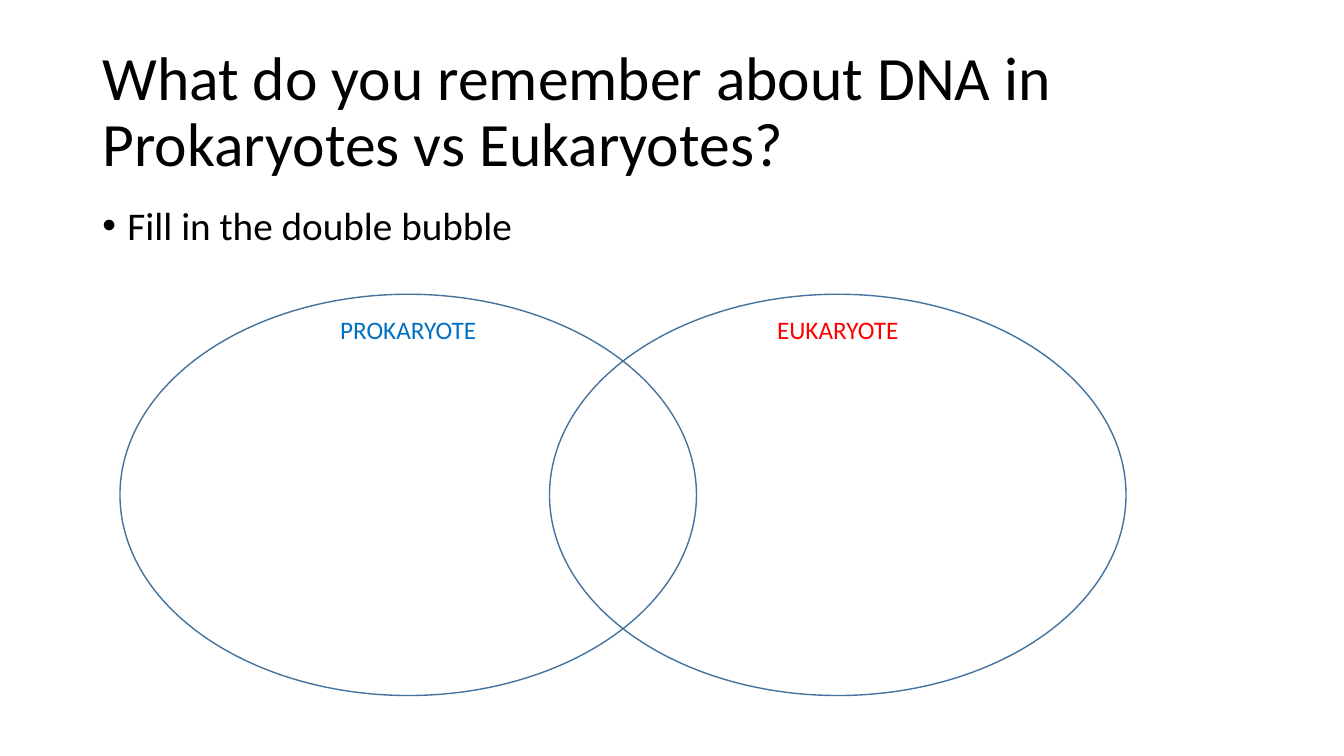
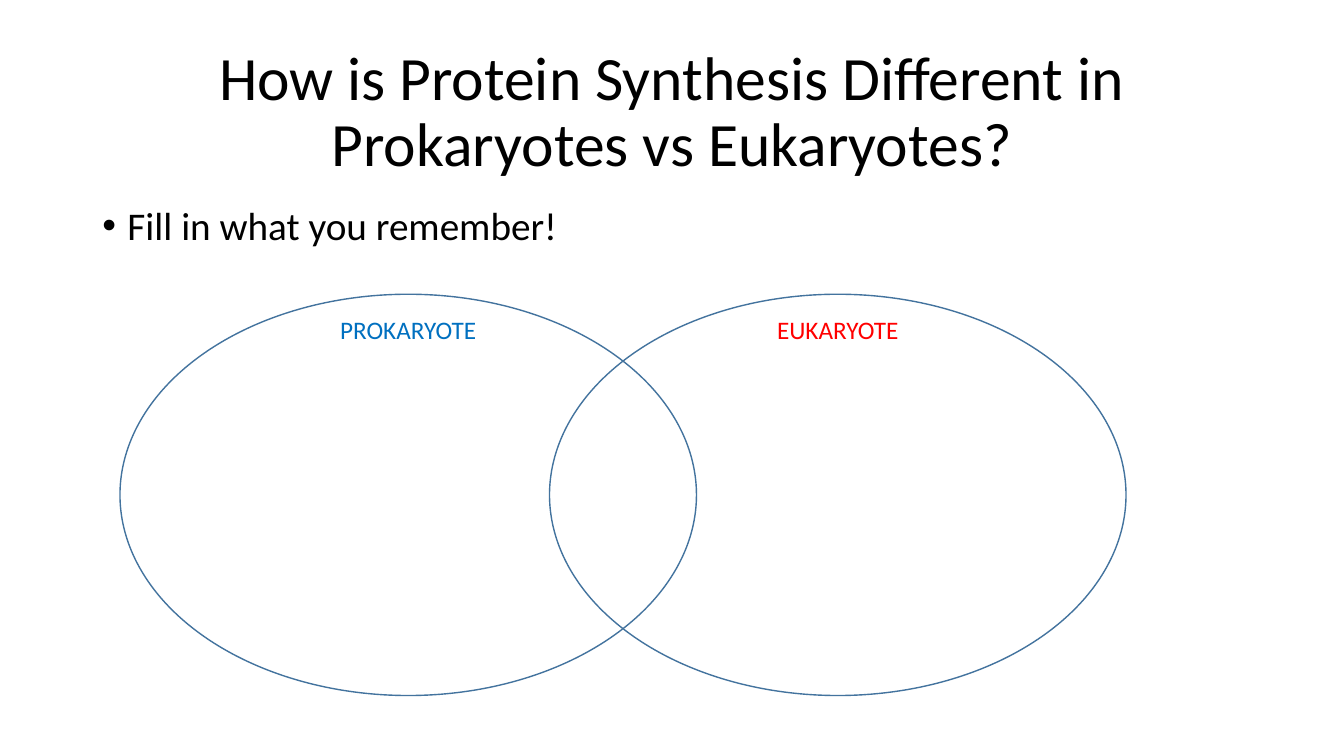
from lxml import etree
from pptx import Presentation
from pptx.dml.color import RGBColor
from pptx.enum.shapes import MSO_SHAPE
from pptx.enum.text import MSO_ANCHOR, MSO_AUTO_SIZE, PP_ALIGN
from pptx.oxml.ns import qn
from pptx.util import Pt

OVAL = MSO_SHAPE.OVAL
MIDDLE = MSO_ANCHOR.MIDDLE
FIXED = MSO_AUTO_SIZE.NONE
LEFT, CENTER = PP_ALIGN.LEFT, PP_ALIGN.CENTER

FONT = "Calibri"
COLORS = {
    "text": "000000",
    "outline": "43739E",
    "prokaryote": "0070C0",
    "eukaryote": "FF0000",
}

# Boxes are left, top, width, height in points.
TITLE_BOX = (66, 28.8, 828, 104.4)
TASK_BOX = (66, 144, 828, 44)
VENN_BOX = (85.7, 210.2, 718.6, 286.6)
OVAL_WIDTH = 411.8
LABEL_DROP = 14.5
LABEL_HEIGHT = 22

SLIDES = [
    ("What do you remember about DNA in Prokaryotes vs Eukaryotes?",
     LEFT, "Fill in the double bubble"),
    ("How is Protein Synthesis Different in Prokaryotes vs Eukaryotes?",
     CENTER, "Fill in what you remember!"),
]
LABELS = [("PROKARYOTE", "prokaryote"), ("EUKARYOTE", "eukaryote")]


def color(name):
    return RGBColor.from_string(COLORS[name])


def put_text(frame, text, size, name="text", align=LEFT):
    """Fill a text frame with one styled paragraph and return it."""
    frame.word_wrap = True
    frame.auto_size = FIXED
    frame.text = text
    para = frame.paragraphs[0]
    para.alignment = align
    font = para.runs[0].font
    font.name, font.size = FONT, Pt(size)
    font.color.rgb = color(name)
    return para


def add_title(slide, box, text, align):
    title = slide.shapes.title
    title.left, title.top, title.width, title.height = map(Pt, box)
    title.text_frame.vertical_anchor = MIDDLE
    put_text(title.text_frame, text, 44, align=align).line_spacing = 0.9


def add_task(slide, box, text):
    frame = slide.shapes.add_textbox(*map(Pt, box)).text_frame
    para = put_text(frame, text, 28)
    para.line_spacing = 0.9
    props = para._p.get_or_add_pPr()
    props.set("marL", str(Pt(18)))
    props.set("indent", str(-Pt(18)))
    etree.SubElement(props, qn("a:buFont"), typeface="Arial")
    etree.SubElement(props, qn("a:buChar"), char="•")


def add_bubble(slide, box, text, name):
    left, top, width, _ = box
    bubble = slide.shapes.add_shape(OVAL, *map(Pt, box))
    bubble.shadow.inherit = False
    bubble.fill.background()
    bubble.line.color.rgb = color("outline")
    bubble.line.width = Pt(1)
    spot = (left, top + LABEL_DROP, width, LABEL_HEIGHT)
    frame = slide.shapes.add_textbox(*map(Pt, spot)).text_frame
    frame.margin_top = frame.margin_bottom = 0
    put_text(frame, text, 18, name, CENTER)


def add_venn(slide, box):
    """Overlap the bubbles so that together they span the box."""
    left, top, width, height = box
    step = (width - OVAL_WIDTH) / (len(LABELS) - 1)
    for i, (text, name) in enumerate(LABELS):
        spot = (left + i * step, top, OVAL_WIDTH, height)
        add_bubble(slide, spot, text, name)


def main():
    deck = Presentation()
    deck.slide_width, deck.slide_height = Pt(960), Pt(540)
    for title, align, task in SLIDES:
        slide = deck.slides.add_slide(deck.slide_layouts[5])
        add_title(slide, TITLE_BOX, title, align)
        add_task(slide, TASK_BOX, task)
        add_venn(slide, VENN_BOX)
    deck.save("out.pptx")


if __name__ == "__main__":
    main()
